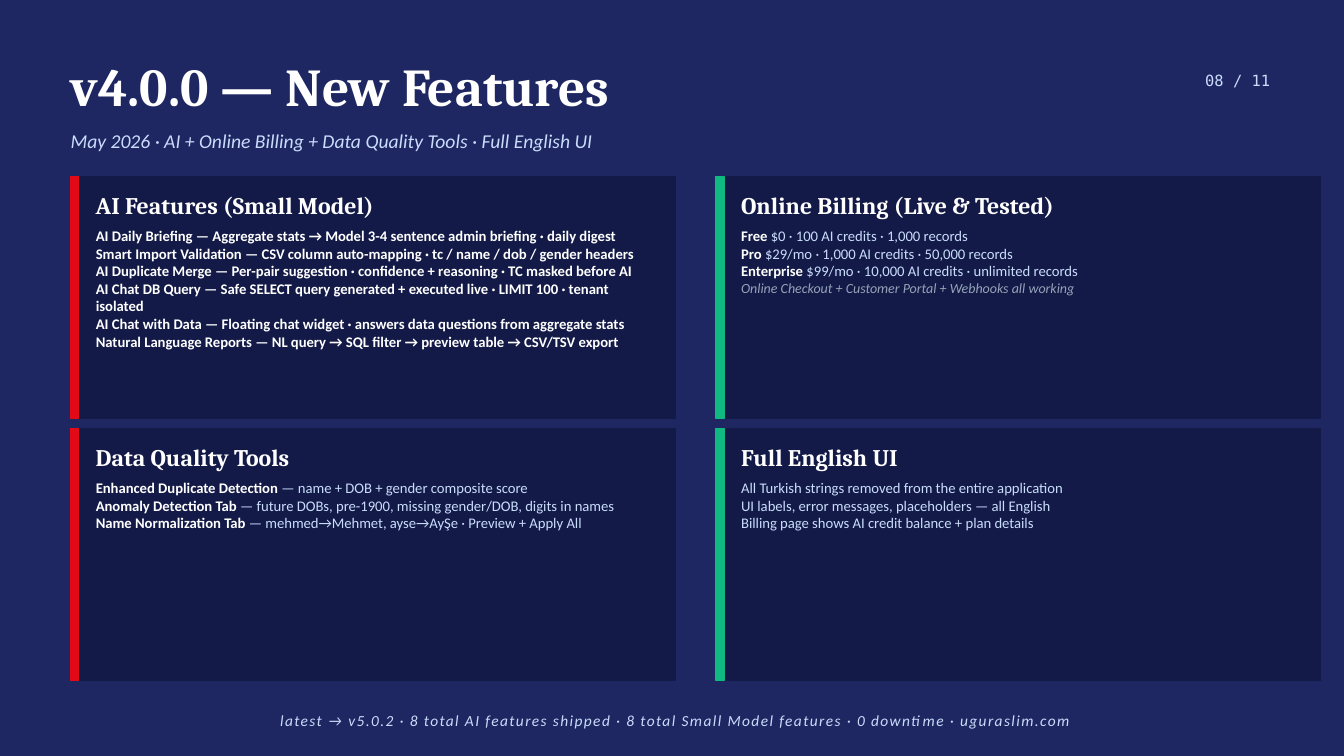
from lxml.etree import SubElement
from pptx import Presentation
from pptx.dml.color import RGBColor
from pptx.enum.shapes import MSO_SHAPE
from pptx.enum.text import MSO_ANCHOR, MSO_AUTO_SIZE, PP_ALIGN
from pptx.oxml.ns import qn
from pptx.util import Inches, Pt

NAVY, PANEL, RED, GREEN = "1E2761", "131A47", "E30A17", "10B981"
WHITE, ICE, SLATE = "FFFFFF", "CADCFC", "94A3B8"

# Run styles: size, colour, bold, italic
STRONG = (10.5, WHITE, True, False)
PLAIN = (10.5, ICE, False, False)
NOTE = (10, SLATE, False, True)

LEFT, CARD_W, COL_STEP = 0.7, 6, 6.4
ROWS = [(1.75, 2.4), (4.25, 2.5)]  # top, height

# Cards in reading order: heading, lines of (text, style) runs
CARDS = [
    ("AI Features (Small Model)", [
        [("AI Daily Briefing — Aggregate stats → Model 3-4 sentence admin briefing · daily digest", STRONG)],
        [("Smart Import Validation — CSV column auto-mapping · tc / name / dob / gender headers", STRONG)],
        [("AI Duplicate Merge — Per-pair suggestion · confidence + reasoning · TC masked before AI", STRONG)],
        [("AI Chat DB Query — Safe SELECT query generated + executed live · LIMIT 100 · tenant isolated", STRONG)],
        [("AI Chat with Data — Floating chat widget · answers data questions from aggregate stats", STRONG)],
        [("Natural Language Reports — NL query → SQL filter → preview table → CSV/TSV export", STRONG)],
    ]),
    ("Online Billing (Live & Tested)", [
        [("Free", STRONG), (" $0 · 100 AI credits · 1,000 records", PLAIN)],
        [("Pro", STRONG), (" $29/mo · 1,000 AI credits · 50,000 records", PLAIN)],
        [("Enterprise", STRONG), (" $99/mo · 10,000 AI credits · unlimited records", PLAIN)],
        [("Online Checkout + Customer Portal + Webhooks all working", NOTE)],
    ]),
    ("Data Quality Tools", [
        [("Enhanced Duplicate Detection", STRONG), (" — name + DOB + gender composite score", PLAIN)],
        [("Anomaly Detection Tab", STRONG),
         (" — future DOBs, pre-1900, missing gender/DOB, digits in names", PLAIN)],
        [("Name Normalization Tab", STRONG), (" — mehmed→Mehmet, ayse→AyŞe · Preview + Apply All", PLAIN)],
    ]),
    ("Full English UI", [
        [("All Turkish strings removed from the entire application", PLAIN)],
        [("UI labels, error messages, placeholders — all English", PLAIN)],
        [("Billing page shows AI credit balance + plan details", PLAIN)],
    ]),
]


def rgb(value):
    return RGBColor.from_string(value)


def style_run(r, size, color, bold=False, italic=False, name="Calibri"):
    font = r.font
    font.size, font.name = Pt(size), name
    font.bold, font.italic = bold, italic
    font.color.rgb = rgb(color)


def place(sp, box, anchor=MSO_ANCHOR.MIDDLE):
    sp.left, sp.top, sp.width, sp.height = map(Inches, box)
    tf = sp.text_frame
    tf.word_wrap = True
    tf.auto_size = MSO_AUTO_SIZE.NONE
    tf.vertical_anchor = anchor
    tf.margin_left = tf.margin_right = tf.margin_top = tf.margin_bottom = 0
    return tf


def add_label(s, box, text, align=PP_ALIGN.LEFT, **style):
    tf = place(s.shapes.add_textbox(0, 0, 0, 0), box)
    tf.text = text
    p = tf.paragraphs[0]
    p.alignment = align
    style_run(p.runs[0], **style)
    return p.runs[0]


def add_block(s, box, color):
    sp = s.shapes.add_shape(MSO_SHAPE.RECTANGLE, *map(Inches, box))
    sp.shadow.inherit = False
    sp.fill.solid()
    sp.fill.fore_color.rgb = rgb(color)
    sp.line.color.rgb = rgb(color)
    sp.line.width = Pt(1)


def fill_list(body, box, lines):
    tf = place(body, box, MSO_ANCHOR.TOP)
    for i, line in enumerate(lines):
        p = tf.paragraphs[0] if i == 0 else tf.add_paragraph()
        pPr = p._p.get_or_add_pPr()
        pPr.set("marL", "0")
        pPr.set("indent", "0")
        SubElement(pPr, qn("a:buNone"))
        p.space_before = Pt(0)
        for text, style in line:
            r = p.add_run()
            r.text = text
            style_run(r, *style)


def add_header(s, x, y):
    tf = place(s.shapes.title, (x, y, 10, 0.7))
    tf.text = "v4.0.0 — New Features"
    p = tf.paragraphs[0]
    p.alignment = PP_ALIGN.LEFT
    style_run(p.runs[0], 38, WHITE, bold=True, name="Cambria")
    add_label(s, (x, y + 0.7, 10, 0.4),
              "May 2026 · AI + Online Billing + Data Quality Tools · Full English UI",
              size=14, color=ICE, italic=True)
    add_label(s, (x + 10.9, y + 0.1, 1, 0.4), "08 / 11", PP_ALIGN.RIGHT,
              size=11, color=ICE, name="DejaVu Sans Mono")


def add_card(s, box, body, heading, lines, accent):
    x, y, w, h = box
    add_block(s, box, PANEL)
    add_block(s, (x, y, 0.08, h), accent)
    add_label(s, (x + 0.25, y + 0.07, w - 0.4, 0.42), heading,
              size=17, color=WHITE, bold=True, name="Cambria")
    fill_list(body, (x + 0.25, y + 0.5, w - 0.4, h - 1.66), lines)
    s.shapes._spTree.append(body._element)  # bring the list in front of its card


def add_footer(s, box):
    r = add_label(s, box,
                  "latest → v5.0.2 · 8 total AI features shipped · 8 total Small Model features"
                  " · 0 downtime · uguraslim.com",
                  PP_ALIGN.CENTER, size=11, color=ICE, italic=True)
    r._r.get_or_add_rPr().set("spc", "100")


def main():
    prs = Presentation()
    prs.slide_width, prs.slide_height = Inches(13.33), Inches(7.5)
    # The comparison layout has a title and four body placeholders
    s = prs.slides.add_slide(prs.slide_layouts[4])
    s.background.fill.solid()
    s.background.fill.fore_color.rgb = rgb(NAVY)

    add_header(s, LEFT, 0.5)
    bodies = [ph for ph in s.placeholders if ph.placeholder_format.idx > 0]
    for i, (body, (heading, lines)) in enumerate(zip(bodies, CARDS)):
        row, col = divmod(i, 2)
        top, height = ROWS[row]
        add_card(s, (LEFT + col * COL_STEP, top, CARD_W, height),
                 body, heading, lines, (RED, GREEN)[col])
    add_footer(s, (LEFT, 7, 12, 0.3))
    prs.save("out.pptx")


if __name__ == "__main__":
    main()
